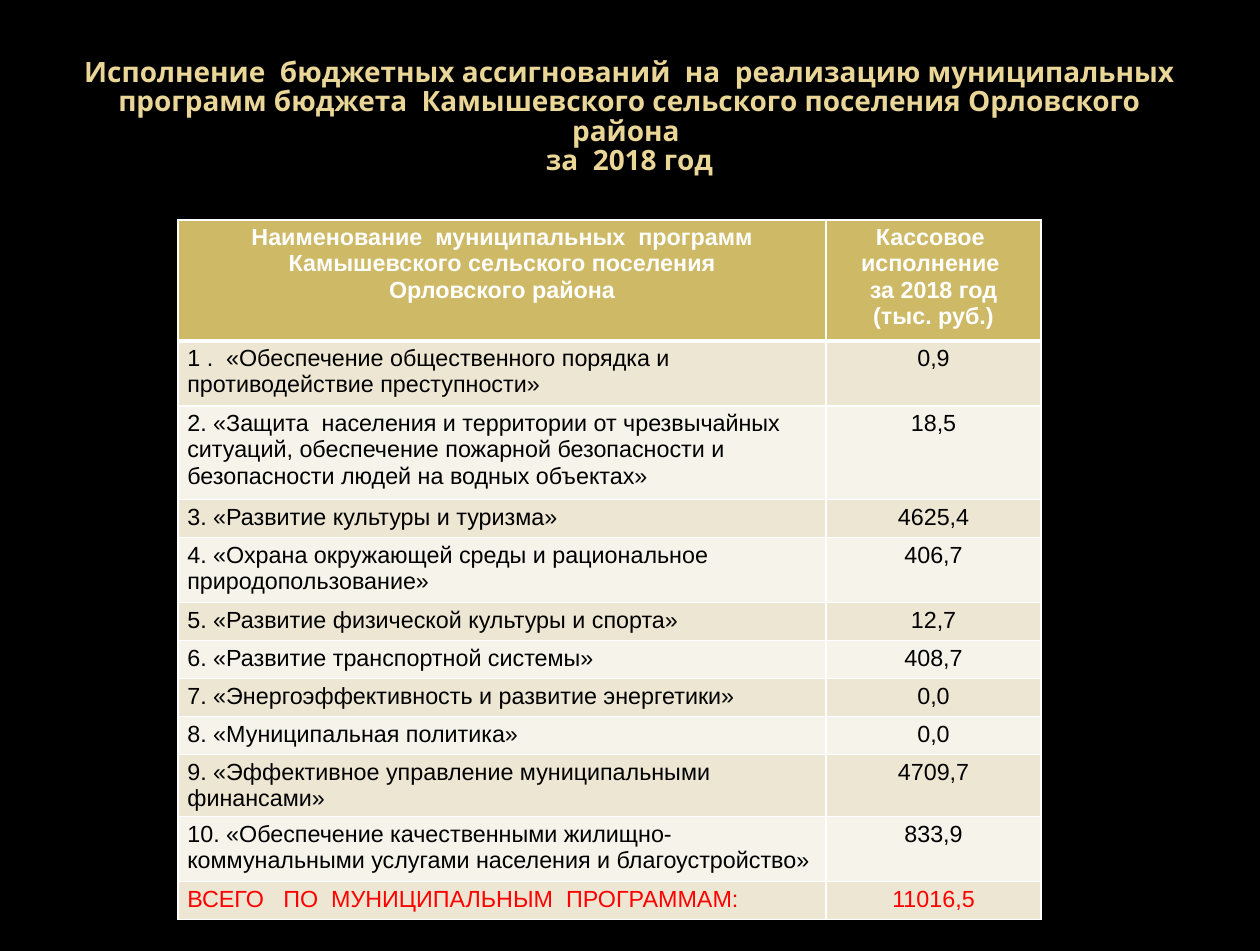
from lxml.etree import SubElement
from pptx import Presentation
from pptx.dml.color import RGBColor
from pptx.enum.text import MSO_ANCHOR, MSO_AUTO_SIZE, PP_ALIGN
from pptx.oxml.ns import qn
from pptx.util import Pt

PX = 9804  # EMU per px
THEME = {
    "background": "000000", "title": "EAD696", "header": "CEB966",
    "bands": ("EDE6D3", "F6F3EA"), "border": "FFFFFF",
    "header_text": "FFFFFF", "body_text": "000000", "total_text": "FF0000",
    "title_font": "Open Sans", "table_font": "Arial",
    "title_size": 21.6, "table_size": 18,
}


def add_text(paragraph, text, font, size, color, bold):
    run = paragraph.add_run()
    run.text = text
    run.font.name = font
    run.font.size = Pt(size)
    run.font.bold = bold
    run.font.color.rgb = RGBColor.from_string(color)


def fill_cell(cell, lines, fill, color, bold, centered, bottom_width):
    # Text
    for index, line in enumerate(lines):
        frame = cell.text_frame
        paragraph = frame.add_paragraph() if index else frame.paragraphs[0]
        paragraph.alignment = PP_ALIGN.CENTER if centered else PP_ALIGN.LEFT
        add_text(paragraph, line, THEME["table_font"], THEME["table_size"], color, bold)
    # Borders come before the fill in the cell properties
    properties = cell._tc.get_or_add_tcPr()
    for side, width in (("L", 1), ("R", 1), ("T", 1), ("B", bottom_width)):
        border = SubElement(properties, qn(f"a:ln{side}"), w=str(Pt(width)))
        solid = SubElement(border, qn("a:solidFill"))
        SubElement(solid, qn("a:srgbClr"), val=THEME["border"])
    cell.fill.solid()
    cell.fill.fore_color.rgb = RGBColor.from_string(fill)


# Slide
deck = Presentation()
deck.slide_width, deck.slide_height = 1260 * PX, 951 * PX
slide = deck.slides.add_slide(deck.slide_layouts[5])
slide.background.fill.solid()
slide.background.fill.fore_color.rgb = RGBColor.from_string(THEME["background"])

# Title
title = slide.shapes.title
title.left, title.top, title.width, title.height = 63 * PX, 38 * PX, 1133 * PX, 159 * PX
heading = title.text_frame
heading.word_wrap = True
heading.auto_size = MSO_AUTO_SIZE.NONE
heading.vertical_anchor = MSO_ANCHOR.MIDDLE
heading.margin_left = heading.margin_right = 13 * PX
heading.margin_top = heading.margin_bottom = 7 * PX
headline = heading.paragraphs[0]
headline.alignment = PP_ALIGN.CENTER
headline.line_spacing = 0.88
title_style = (THEME["title_font"], THEME["title_size"], THEME["title"], True)
add_text(headline, "Исполнение  бюджетных ассигнований  на  реализацию муниципальных "
         "программ бюджета  Камышевского сельского поселения Орловского района ", *title_style)
headline.add_line_break()
add_text(headline, "за  2018 год", *title_style)

# Programmes: name, cash execution, row height
header = (
    ("Наименование  муниципальных  программ", "Камышевского сельского поселения",
     "Орловского района"),
    ("Кассовое ", "исполнение ", "за 2018 год", "(тыс. руб.)"),
    121,
)
programmes = [
    ("1 .  «Обеспечение общественного порядка и противодействие преступности»", "0,9", 65),
    ("2. «Защита  населения и территории от чрезвычайных ситуаций, обеспечение "
     "пожарной безопасности и безопасности людей на водных объектах»", "18,5", 94),
    ("3. «Развитие культуры и туризма»", "4625,4", 38),
    ("4. «Охрана окружающей среды и рациональное природопользование»", "406,7", 65),
    ("5. «Развитие физической культуры и спорта»", "12,7", 38),
    ("6. «Развитие транспортной системы»", "408,7", 38),
    ("7. «Энергоэффективность и развитие энергетики»", "0,0", 38),
    ("8. «Муниципальная политика»", "0,0", 38),
    ("9. «Эффективное управление муниципальными финансами»", "4709,7", 62),
    ("10. «Обеспечение качественными жилищно-коммунальными услугами населения "
     "и благоустройство»", "833,9", 65),
    ("ВСЕГО   ПО  МУНИЦИПАЛЬНЫМ  ПРОГРАММАМ:", "11016,5", 38),
]
rows = [header] + [((name,), (amount,), height) for name, amount, height in programmes]
column_widths = (648, 215)

# Table
budget = slide.shapes.add_table(
    len(rows), len(column_widths), 178 * PX, 220 * PX,
    sum(column_widths) * PX, sum(height for _, _, height in rows) * PX).table
for column, width in zip(budget.columns, column_widths):
    column.width = width * PX

for number, (name, amount, height) in enumerate(rows):
    budget.rows[number].height = height * PX
    is_header = number == 0
    fill = THEME["header"] if is_header else THEME["bands"][(number - 1) % 2]
    if is_header:
        color = THEME["header_text"]
    elif number == len(rows) - 1:
        color = THEME["total_text"]
    else:
        color = THEME["body_text"]
    for position, lines in enumerate((name, amount)):
        fill_cell(budget.cell(number, position), lines, fill, color, is_header,
                  is_header or position == 1, 3 if is_header else 1)

deck.save("out.pptx")
